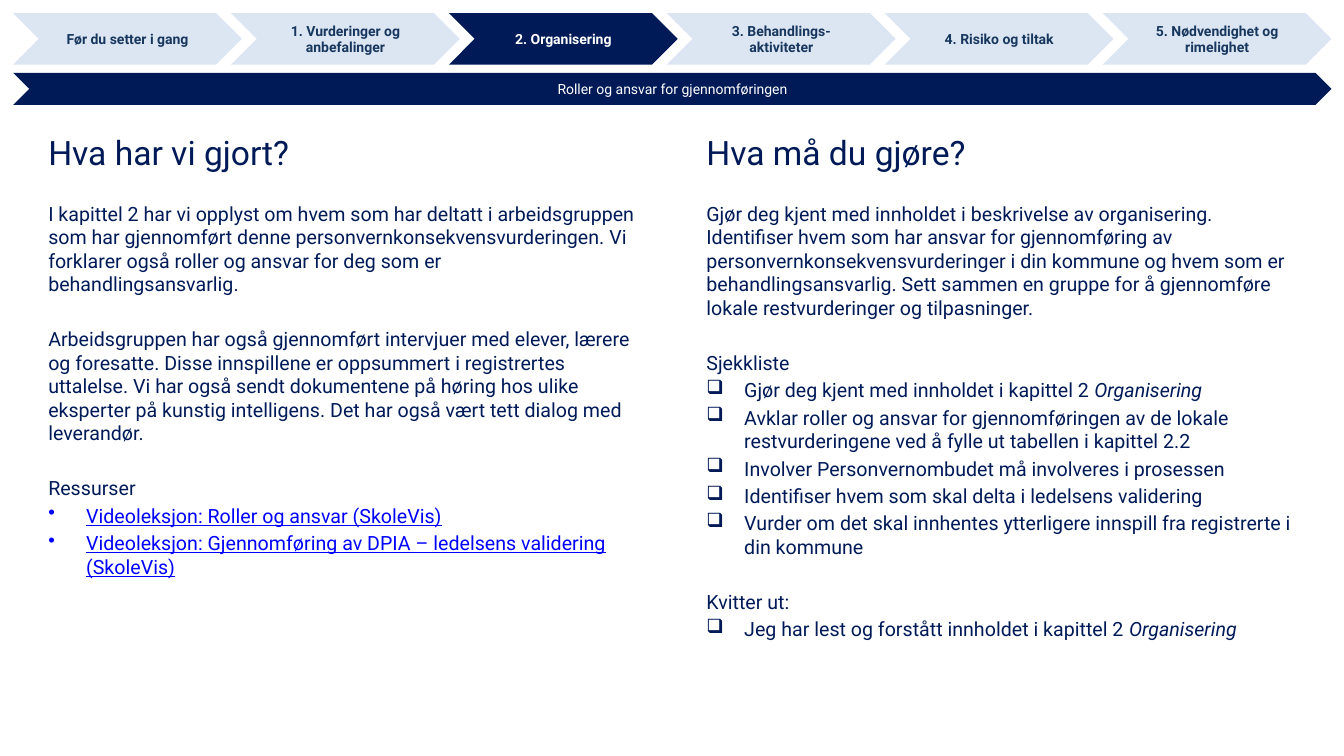
import pptx
import pptx.util
import pptx.dml.color
import pptx.enum.shapes
import pptx.enum.text
import pptx.oxml.ns
from lxml import etree
from dataclasses import dataclass

Pt = pptx.util.Pt
Align = pptx.enum.text.PP_ALIGN
Anchor = pptx.enum.text.MSO_ANCHOR

# Content
STEPS = ["Før du setter i gang", "1. Vurderinger og anbefalinger", "2. Organisering",
         "3. Behandlings-aktiviteter", "4. Risiko og tiltak", "5. Nødvendighet og rimelighet"]
ACTIVE_STEP = 2
SUBSTEP = "Roller og ansvar for gjennomføringen"

# Each paragraph: (kind, list of (text, style))
COLUMNS = [
    ("Hva har vi gjort?", [
        ("text", [("I kapittel 2 har vi opplyst om hvem som har deltatt i arbeidsgruppen som har "
                   "gjennomført denne personvernkonsekvensvurderingen. Vi forklarer også roller og "
                   "ansvar for deg som er behandlingsansvarlig.", "plain")]),
        ("section", [("Arbeidsgruppen har også gjennomført intervjuer med elever, lærere og "
                      "foresatte. Disse innspillene er oppsummert i registrertes uttalelse. Vi har "
                      "også sendt dokumentene på høring hos ulike eksperter på kunstig intelligens. "
                      "Det har også vært tett dialog med leverandør.", "plain")]),
        ("section", [("Ressurser", "plain")]),
        ("bullet", [("Videoleksjon: Roller og ansvar (SkoleVis)", "link")]),
        ("bullet", [("Videoleksjon: Gjennomføring av DPIA – ledelsens validering (SkoleVis)",
                     "link")]),
    ]),
    ("Hva må du gjøre?", [
        ("text", [("Gjør deg kjent med innholdet i beskrivelse av organisering", "plain"),
                  (". ", "italic"),
                  ("Identifiser hvem som har ansvar for gjennomføring av "
                   "personvernkonsekvensvurderinger i din kommune og hvem som er "
                   "behandlingsansvarlig. Sett sammen en gruppe for å gjennomføre lokale "
                   "restvurderinger og tilpasninger.", "plain")]),
        ("section", [("Sjekkliste", "plain")]),
        ("check", [("Gjør deg kjent med innholdet i kapittel 2 ", "plain"),
                   ("Organisering", "italic")]),
        ("check", [("Avklar roller og ansvar for gjennomføringen av de lokale restvurderingene "
                    "ved å fylle ut tabellen i kapittel 2.2", "plain")]),
        ("check", [("Involver Personvernombudet må involveres i prosessen", "plain")]),
        ("check", [("Identifiser hvem som skal delta i ledelsens validering", "plain")]),
        ("check", [("Vurder om det skal innhentes ytterligere innspill fra registrerte i din "
                    "kommune", "plain")]),
        ("section", [("Kvitter ut:", "plain")]),
        ("check", [("Jeg har lest og forstått innholdet i kapittel 2 ", "plain"),
                   ("Organisering", "italic")]),
    ]),
]
BULLETS = {"bullet": "•", "check": "❑"}


@dataclass(frozen=True)
class Theme:
    font: str = "Roboto"
    navy: str = "001A58"
    pale: str = "DCE6F2"
    step_text: str = "17375E"
    white: str = "FFFFFF"
    link: str = "0000FF"
    step_size: float = 10
    body_size: float = 14
    heading_size: float = 24


THEME = Theme()

# Layout in points
MARGIN = 9.4
STEP_WIDTH, STEP_HEIGHT, STEP_PITCH = 163.4, 36.7, 155.66
SUBSTEP_TOP, SUBSTEP_WIDTH, SUBSTEP_HEIGHT = 52, 941.7, 23
COLUMN_LEFT, COLUMN_PITCH, COLUMN_WIDTH = 27.4, 470.1, 435
HEADING_TOP, HEADING_HEIGHT = 87.1, 43.2
BODY_TOP, BODY_HEIGHT = 140.4, 347
INDENT = 27
PARAGRAPH_GAP, SECTION_GAP = 2.8, 22.4


def rgb(color):
    return pptx.dml.color.RGBColor.from_string(color)


def add_run(paragraph, text, size, color, bold=False, italic=False, underline=False):
    run = paragraph.add_run()
    run.text = text
    font = run.font
    font.name, font.size, font.bold = THEME.font, Pt(size), bold
    font.italic, font.underline = italic, underline
    font.color.rgb = rgb(color)


def add_chevron(slide, box, text, fill, color, bold):
    shape = slide.shapes.add_shape(pptx.enum.shapes.MSO_SHAPE.CHEVRON, *map(Pt, box))
    shape.shadow.inherit = False
    shape.fill.solid()
    shape.fill.fore_color.rgb = rgb(fill)
    shape.line.fill.background()
    shape.text_frame.word_wrap = True
    shape.text_frame.vertical_anchor = Anchor.MIDDLE
    paragraph = shape.text_frame.paragraphs[0]
    paragraph.alignment = Align.CENTER
    add_run(paragraph, text, THEME.step_size, color, bold)


def add_text_frame(slide, box, anchor):
    frame = slide.shapes.add_textbox(*map(Pt, box)).text_frame
    frame.word_wrap = True
    frame.vertical_anchor = anchor
    return frame


def set_bullet(paragraph, character):
    properties = paragraph._p.get_or_add_pPr()
    properties.set("marL", str(Pt(INDENT)))
    properties.set("indent", str(-Pt(INDENT)))
    bullet = etree.SubElement(properties, pptx.oxml.ns.qn("a:buChar"))
    bullet.set("char", character)


def add_body(slide, box, paragraphs):
    frame = add_text_frame(slide, box, Anchor.TOP)
    for index, (kind, runs) in enumerate(paragraphs):
        paragraph = frame.add_paragraph() if index else frame.paragraphs[0]
        if index:
            paragraph.space_before = Pt(SECTION_GAP if kind == "section" else PARAGRAPH_GAP)
        if kind in BULLETS:
            set_bullet(paragraph, BULLETS[kind])
        for text, style in runs:
            is_link = style == "link"
            add_run(paragraph, text, THEME.body_size, THEME.link if is_link else THEME.navy,
                    italic=style == "italic", underline=is_link)


def main():
    presentation = pptx.Presentation()
    presentation.slide_width, presentation.slide_height = Pt(960), Pt(540)
    slide = presentation.slides.add_slide(presentation.slide_layouts[6])

    # Progress chevrons
    for index, step in enumerate(STEPS):
        active = index == ACTIVE_STEP
        add_chevron(slide, (MARGIN + index * STEP_PITCH, MARGIN, STEP_WIDTH, STEP_HEIGHT), step,
                    THEME.navy if active else THEME.pale,
                    THEME.white if active else THEME.step_text, True)
    add_chevron(slide, (MARGIN, SUBSTEP_TOP, SUBSTEP_WIDTH, SUBSTEP_HEIGHT), SUBSTEP,
                THEME.navy, THEME.white, False)

    # Two columns with heading and body
    for index, (heading, paragraphs) in enumerate(COLUMNS):
        left = COLUMN_LEFT + index * COLUMN_PITCH
        frame = add_text_frame(slide, (left, HEADING_TOP, COLUMN_WIDTH, HEADING_HEIGHT),
                               Anchor.MIDDLE)
        add_run(frame.paragraphs[0], heading, THEME.heading_size, THEME.navy)
        add_body(slide, (left, BODY_TOP, COLUMN_WIDTH, BODY_HEIGHT), paragraphs)

    presentation.save("out.pptx")


if __name__ == "__main__":
    main()
